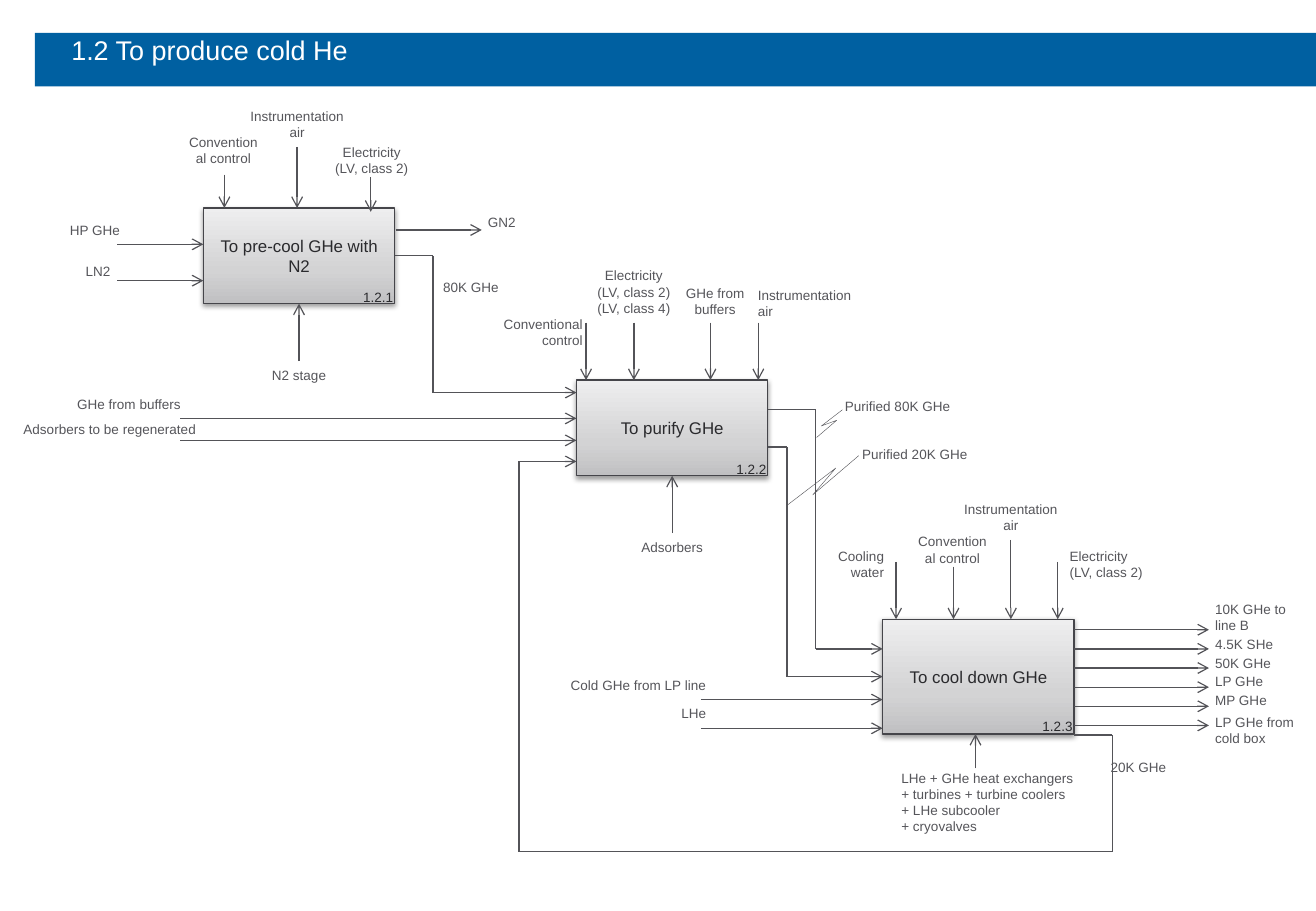
"""Build the functional flow slide for producing cold helium."""
from lxml.etree import SubElement
from pptx import Presentation
from pptx.dml.color import RGBColor
from pptx.enum.shapes import MSO_CONNECTOR as Connector, MSO_SHAPE as Shape
from pptx.enum.text import MSO_ANCHOR as Anchor, PP_ALIGN as Align
from pptx.oxml.ns import qn
from pptx.util import Inches, Pt

WIDTH, HEIGHT = 10.83, 7.5
CELL = 2 / 25.4
ORIGIN_X, ORIGIN_Y = 0.02, -0.02
FONT = "Arial"
COLORS = {"banner": "0060A1", "white": "FFFFFF", "outline": "45454A",
          "flow": "535358", "label": "55555A", "box text": "2A2A2D",
          "shadow": "000000"}
BOX_GRADIENT = [(0, "C0C0C2"), (35, "D3D3D4"), (100, "EEEEEF")]
ALIGNMENTS = {"l": Align.LEFT, "c": Align.CENTER, "r": Align.RIGHT}

TITLE = "1.2 To produce cold He"

BOXES = [
    ("To pre-cool GHe with N2", "1.2.1", 21, 22, 20, 10),
    ("To purify GHe", "1.2.2", 60, 40, 20, 10),
    ("To cool down GHe", "1.2.3", 92, 65, 20, 12),
]

LABELS = [
    ("HP GHe", 5.8, 22.9, 9.3, 1, "l"),
    ("LN2", 4, 27.1, 12, 1, "c"),
    ("Conventional control", 18.1, 13.6, 10, 2, "c"),
    ("Instrumentation air", 23.8, 10.9, 14, 2, "c"),
    ("Electricity\n(LV, class 2)", 32.6, 14.7, 12, 2, "c"),
    ("GN2", 46.2, 22, 12, 1, "c"),
    ("80K GHe", 44.8, 28.8, 9.3, 1, "l"),
    ("N2 stage", 23, 38, 16, 1, "c"),
    ("GHe from buffers", 3.1, 41, 16.8, 1, "r"),
    ("Adsorbers to be regenerated", 0, 43.7, 21.5, 1, "r"),
    ("Conventional control", 50.9, 32.7, 11, 2, "r"),
    ("Electricity\n(LV, class 2)\n(LV, class 4)", 60, 27.6, 12, 3, "c"),
    ("GHe from buffers", 69, 29.4, 11, 2, "c"),
    ("Instrumentation air", 77.7, 29.6, 14, 2, "l"),
    ("Adsorbers", 62, 56, 16, 1, "c"),
    ("Purified 80K GHe", 86.8, 41.2, 14, 1, "l"),
    ("Purified 20K GHe", 88.6, 46.3, 14, 1, "l"),
    ("Cooling water", 85.4, 56.9, 8, 2, "r"),
    ("Conventional control", 94.3, 55.4, 10, 2, "c"),
    ("Instrumentation air", 98.4, 52, 14, 2, "c"),
    ("Electricity\n(LV, class 2)", 110.3, 56.9, 12, 2, "l"),
    ("Cold GHe from LP line", 58, 70.4, 16.8, 1, "r"),
    ("LHe", 58, 73.4, 16.8, 1, "r"),
    ("LHe + GHe heat exchangers\n+ turbines + turbine coolers\n"
     "+ LHe subcooler\n+ cryovalves", 92.7, 80.1, 22, 4, "l"),
    ("10K GHe to line B", 125.5, 62.5, 11.8, 2, "l"),
    ("4.5K SHe", 125.5, 66.1, 9, 1, "l"),
    ("50K GHe", 125.5, 68.1, 9, 1, "l"),
    ("LP GHe", 125.5, 70, 11, 1, "l"),
    ("MP GHe", 125.5, 72, 10, 1, "l"),
    ("LP GHe from cold box", 125.5, 74.3, 12.1, 2, "l"),
    ("20K GHe", 112.9, 79, 10, 1, "r"),
]

INPUTS = [(12, 25.8, 21), (12, 29.6, 21), (18.6, 44, 60), (18.6, 46.3, 60),
          (73, 73.4, 92), (73, 76.4, 92)]
OUTPUTS = [(41.1, 24.3, 50.1)] + [(112, 66.1 + 2 * i, 126.1) for i in range(6)]
CONTROLS = [(23.2, 18.5, 22), (30.8, 15.6, 22), (38.5, 18.8, 22.4),
            (61, 34, 40), (66, 34, 40), (74, 34, 40), (79, 34, 40),
            (93.4, 59, 65), (99.4, 59.5, 65), (105.4, 56.7, 65),
            (110.3, 59, 65)]
RESOURCES = [(31, 38, 32), (70, 56, 50), (101.7, 80.6, 77)]
ROUTES = [
    [(41, 27), (45, 27), (45, 41.3), (60, 41.3)],
    [(80, 43.1), (85, 43.1), (85, 68.1), (92, 68.1)],
    [(80, 47), (82, 47), (82, 71), (92, 71)],
    [(112, 77.1), (116, 77.1), (116, 89.3), (54, 89.3), (54, 48.5), (60, 48.5)],
]
LEADERS = [
    [(87.8, 43.1), (85.6, 44.8), (87.2, 44.2), (85.1, 46)],
    [(89.5, 47.9), (84.7, 52), (87.1, 49.2), (82, 53.1)],
]


def rgb(name):
    return RGBColor.from_string(COLORS[name])


def at(column, row):
    return Inches(ORIGIN_X + column * CELL), Inches(ORIGIN_Y + row * CELL)


def area(column, row, columns, rows):
    return *at(column, row), Inches(columns * CELL), Inches(rows * CELL)


def write(shape, text, size, color, align=Align.LEFT, anchor=Anchor.TOP):
    frame = shape.text_frame
    frame.word_wrap = True
    frame.vertical_anchor = anchor
    frame.text = text
    for paragraph in frame.paragraphs:
        paragraph.alignment = align
        for run in paragraph.runs:
            run.font.name = FONT
            run.font.size = Pt(size)
            run.font.color.rgb = rgb(color)
    return frame


def add_banner(slide):
    left, top, _, height = area(3.4, 3.7, 0, 5.6)
    banner = slide.shapes.add_shape(Shape.RECTANGLE, left, top,
                                    Inches(WIDTH) - left, height)
    banner.shadow.inherit = False
    banner.fill.solid()
    banner.fill.fore_color.rgb = rgb("banner")
    banner.line.fill.background()
    title = slide.shapes.add_textbox(*area(7.2, 3.8, 124, 5))
    frame = write(title, TITLE, 16, "white")
    frame.margin_left = frame.margin_right = 0
    frame.margin_top = frame.margin_bottom = 0


def add_color(parent, value):
    return SubElement(parent, qn("a:srgbClr"), val=value)


def add_box(slide, text, tag, column, row, columns, rows):
    box = slide.shapes.add_shape(Shape.RECTANGLE, *area(column, row, columns, rows))
    box.fill.gradient()
    box.fill.gradient_angle = 90
    properties = box._element.spPr
    stops = properties.find(".//" + qn("a:gsLst"))
    stops.clear()
    for percent, value in BOX_GRADIENT:
        add_color(SubElement(stops, qn("a:gs"), pos=str(percent * 1000)), value)
    box.line.color.rgb = rgb("outline")
    box.line.width = Pt(0.75)
    box.shadow.inherit = False
    shadow = SubElement(properties.find(qn("a:effectLst")), qn("a:outerShdw"),
                        blurRad=str(Pt(3.1)), dist=str(Pt(1.6)),
                        dir="5400000", rotWithShape="0")
    SubElement(add_color(shadow, COLORS["shadow"]), qn("a:alpha"), val="38000")
    write(box, text, 10, "box text", Align.CENTER, Anchor.MIDDLE)
    number = slide.shapes.add_textbox(
        *area(column + 8, row + 0.76 * rows, 13.1, 0.34 * rows))
    write(number, tag, 8, "box text", Align.RIGHT, Anchor.MIDDLE)
    middle, center = column + columns / 2, row + rows / 2
    sites = [(middle, row), (column, center), (middle, row + rows),
             (column + columns, center)]
    return {point: (box, index) for index, point in enumerate(sites)}


def add_flow(slide, points, sites):
    for start, end in zip(points, points[1:]):
        line = slide.shapes.add_connector(Connector.STRAIGHT, *at(*start), *at(*end))
        if start in sites:
            line.begin_connect(*sites[start])
        if end in sites:
            line.end_connect(*sites[end])
        line.line.color.rgb = rgb("flow")
        line.line.width = Pt(0.75)
        SubElement(line._element.spPr, qn("a:effectLst"))
    SubElement(line.line._get_or_add_ln(), qn("a:tailEnd"), type="arrow")


def add_leader(slide, points):
    corners = [at(*point) for point in points]
    builder = slide.shapes.build_freeform(*corners[0])
    builder.add_line_segments(corners[1:], close=False)
    leader = builder.convert_to_shape()
    leader.shadow.inherit = False
    leader.fill.background()
    leader.line.color.rgb = rgb("label")
    leader.line.width = Pt(0.25)


def main():
    presentation = Presentation()
    presentation.slide_width = Inches(WIDTH)
    presentation.slide_height = Inches(HEIGHT)
    slide = presentation.slides.add_slide(presentation.slide_layouts[6])
    add_banner(slide)
    sites = {}
    for box in BOXES:
        sites.update(add_box(slide, *box))
    across = [[(x, y), (end, y)] for x, y, end in INPUTS + OUTPUTS]
    upright = [[(x, y), (x, end)] for x, y, end in CONTROLS + RESOURCES]
    for points in across + upright + ROUTES:
        add_flow(slide, points, sites)
    for points in LEADERS:
        add_leader(slide, points)
    for text, column, row, columns, lines, align in LABELS:
        label = slide.shapes.add_textbox(
            *area(column, row, columns, 1.35 + 1.65 * lines))
        write(label, text, 8, "label", ALIGNMENTS[align])
    presentation.save("out.pptx")


if __name__ == "__main__":
    main()
